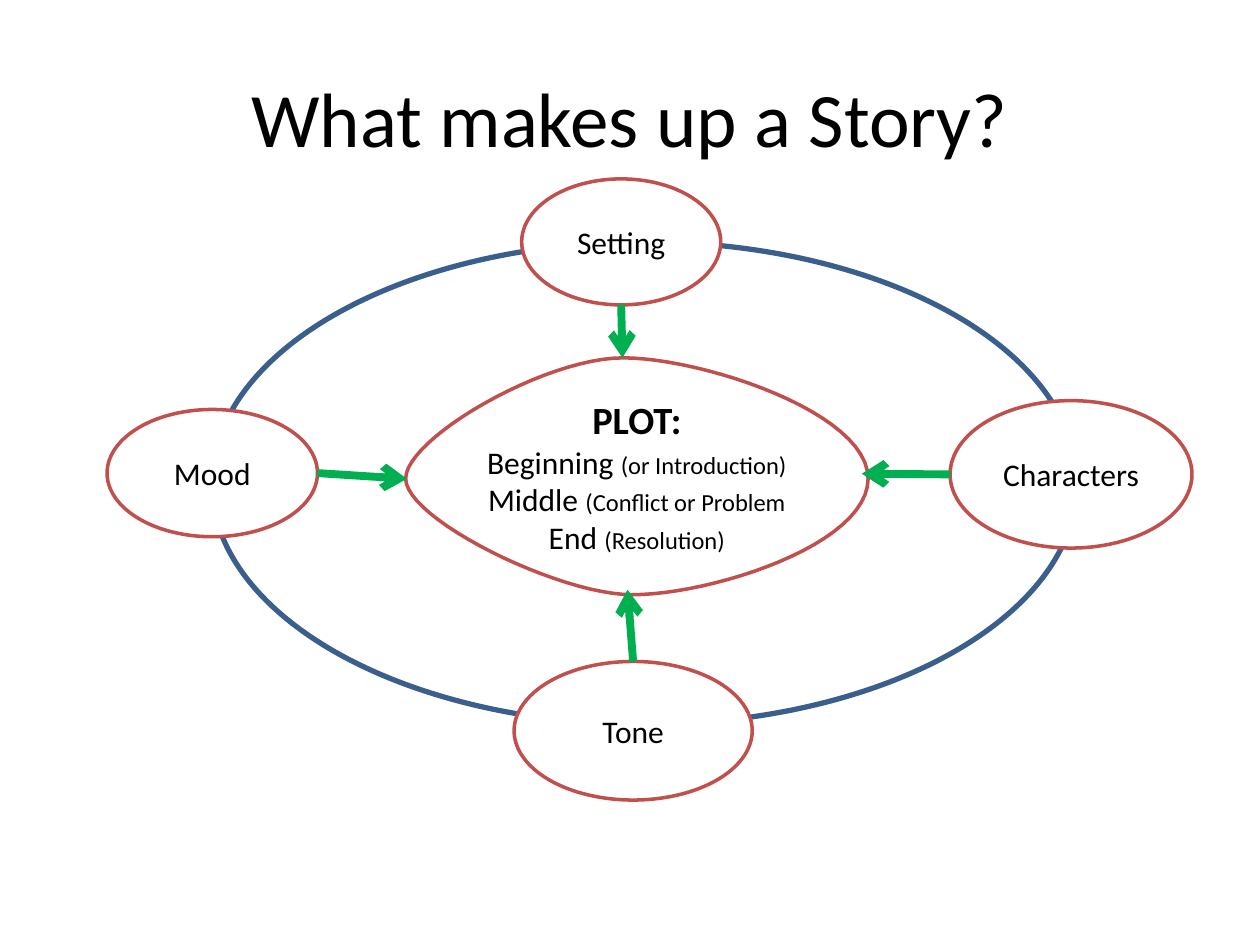
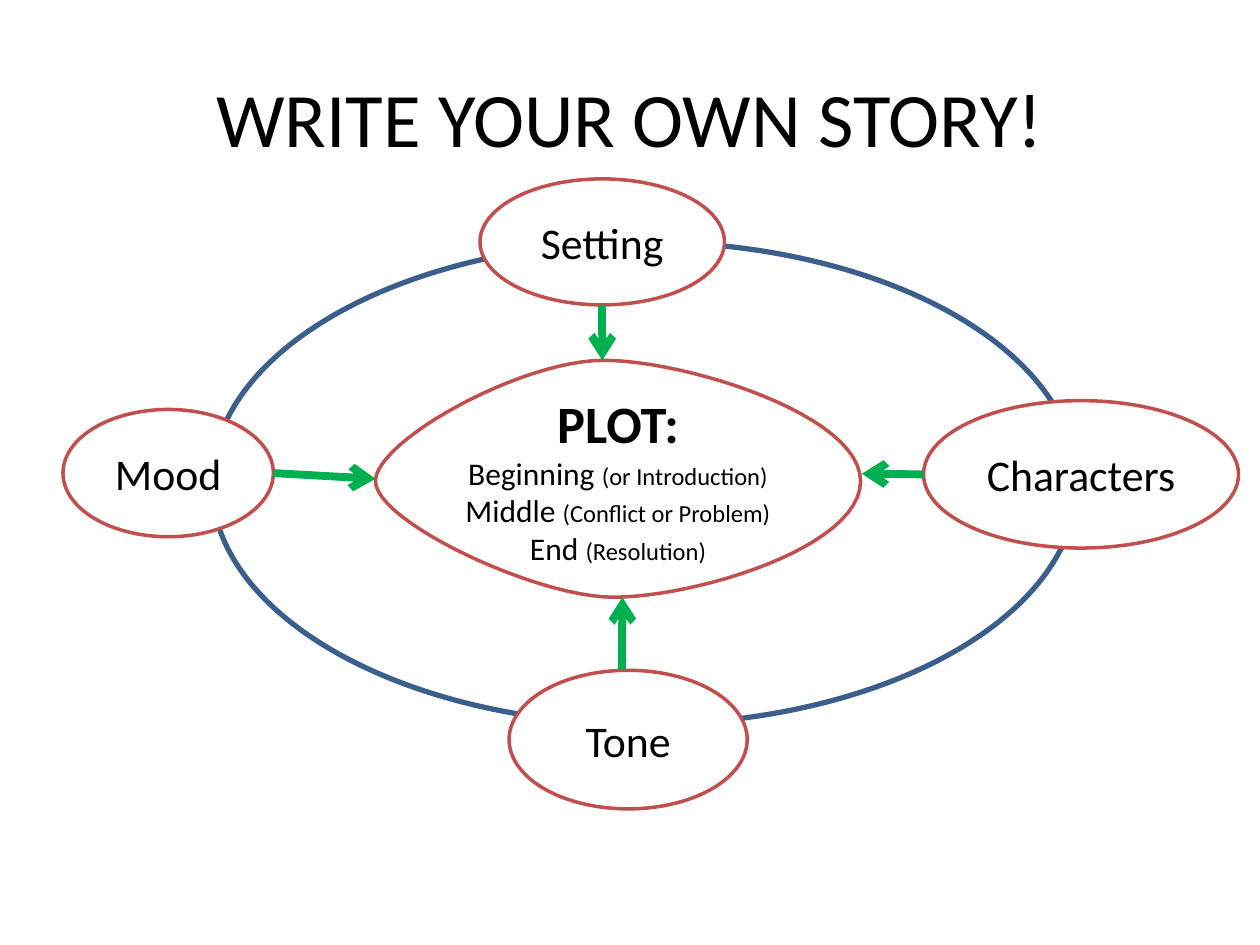
from dataclasses import dataclass
from typing import NamedTuple, Optional

from pptx import Presentation
from pptx.dml.color import RGBColor
from pptx.enum.shapes import MSO_CONNECTOR, MSO_SHAPE
from pptx.enum.text import MSO_ANCHOR, PP_ALIGN
from pptx.oxml.ns import qn
from pptx.util import Inches, Pt
from lxml.etree import SubElement

COLUMNS, ROWS = 100, 75
CELL = Inches(0.1)


@dataclass(frozen=True)
class Theme:
    font: str = "Calibri"
    text: RGBColor = RGBColor(0x00, 0x00, 0x00)
    paper: RGBColor = RGBColor(0xFF, 0xFF, 0xFF)
    ring: RGBColor = RGBColor(0x3A, 0x5F, 0x8C)
    outline: RGBColor = RGBColor(0xC0, 0x50, 0x4D)
    arrow: RGBColor = RGBColor(0x00, 0xB0, 0x50)
    title_size: float = 44
    stage_size: float = 18
    note_size: float = 14
    ring_width: float = 3
    outline_width: float = 2
    arrow_width: float = 4.5


THEME = Theme()


class Point(NamedTuple):
    x: float
    y: float


class Box(NamedTuple):
    """A place on the grid, in columns and rows."""
    x: float
    y: float
    w: float
    h: float

    def at(self, across: float, down: float) -> Point:
        return Point(self.x + across * self.w, self.y + down * self.h)


class Run(NamedTuple):
    text: str
    size: float
    bold: bool = False


class Element(NamedTuple):
    """A story element; its arrow leaves the edge that faces the plot."""
    name: str
    box: Box
    tip: Point
    start: Optional[Point] = None


class Story(NamedTuple):
    title: str
    name_size: float
    heading_size: float
    conflict: str
    plot: Box
    elements: list[Element]


TITLE = Box(5, 3, 90, 12.5)
RING = Box(16.8, 19.2, 68.7, 38.3)
FACING = {"Mood": (1, 0.5), "Tone": (0.5, 0), "Characters": (0, 0.5), "Setting": (0.5, 1)}

# The plot outline in shares of its box: a start, then curves (control, control, end).
PLOT_START = (0, 0.51)
PLOT_CURVES = [
    ((0, 0.34), (0.3, 0), (0.47, 0)),
    ((0.64, 0), (1, 0.23), (1, 0.51)),
    ((1, 0.79), (0.66, 1), (0.49, 1)),
    ((0.33, 1), (0, 0.68), PLOT_START),
]
CURVE_STEPS = 24

STORIES = [
    Story("What makes up a Story?", 18, 22, "(Conflict or Problem", Box(32.2, 28.4, 36.7, 18.8), [
        Element("Mood", Box(8.5, 32.5, 16.7, 10.1), Point(32.3, 38)),
        Element("Tone", Box(40.8, 52.5, 18.9, 11), Point(49.8, 46.8)),
        Element("Characters", Box(75.4, 31.8, 19.2, 11.7), Point(68.4, 37.6)),
        Element("Setting", Box(41.4, 14.2, 15.8, 10), Point(49.4, 28.4)),
    ]),
    Story("WRITE YOUR OWN STORY!", 25, 30, "(Conflict or Problem)", Box(29.8, 28.6, 38.5, 18.8), [
        Element("Mood", Box(5, 32.5, 16.7, 10.1), Point(29.8, 38)),
        Element("Tone", Box(40.4, 53.2, 18.9, 11), Point(49.4, 47.4), Point(49.4, 53.1)),
        Element("Characters", Box(73.3, 31.8, 25, 11.7), Point(68.4, 37.6)),
        Element("Setting", Box(38.1, 14.2, 19.4, 10), Point(47.8, 28.6)),
    ]),
]


def emu(*cells: float) -> list[int]:
    return [round(c * CELL) for c in cells]


def write(tf, lines: list[list[Run]]) -> None:
    tf.word_wrap = True
    tf.vertical_anchor = MSO_ANCHOR.MIDDLE
    for i, runs in enumerate(lines):
        p = tf.add_paragraph() if i else tf.paragraphs[0]
        p.alignment = PP_ALIGN.CENTER
        for run in runs:
            r = p.add_run()
            r.text = run.text
            r.font.name = THEME.font
            r.font.size = Pt(run.size)
            r.font.bold = run.bold
            r.font.color.rgb = THEME.text


def set_line(sp, color: RGBColor, width: float) -> None:
    sp.line.color.rgb = color
    sp.line.width = Pt(width)


def style_bubble(sp) -> None:
    sp.shadow.inherit = False
    sp.fill.solid()
    sp.fill.fore_color.rgb = THEME.paper
    set_line(sp, THEME.outline, THEME.outline_width)


def add_title(s, text: str) -> None:
    title = s.shapes.title
    title.left, title.top, title.width, title.height = emu(*TITLE)
    write(title.text_frame, [[Run(text, THEME.title_size)]])


def add_ring(s) -> None:
    sp = s.shapes.add_shape(MSO_SHAPE.OVAL, *emu(*RING))
    sp.shadow.inherit = False
    sp.fill.background()
    set_line(sp, THEME.ring, THEME.ring_width)


def add_element(s, element: Element, size: float) -> None:
    sp = s.shapes.add_shape(MSO_SHAPE.OVAL, *emu(*element.box))
    style_bubble(sp)
    write(sp.text_frame, [[Run(element.name, size)]])


def plot_outline() -> list[tuple[float, float]]:
    """Points along the plot's Bézier curves, in shares of its box."""
    points, a = [], PLOT_START
    for b, c, d in PLOT_CURVES:
        for step in range(1, CURVE_STEPS + 1):
            t = step / CURVE_STEPS
            u = 1 - t
            weights = (u**3, 3 * u * u * t, 3 * u * t * t, t**3)
            points.append(tuple(
                sum(w * k for w, k in zip(weights, axis)) for axis in zip(a, b, c, d)))
        a = d
    return points


def add_plot(s, story: Story) -> None:
    builder = s.shapes.build_freeform(*emu(*story.plot.at(*PLOT_START)))
    builder.add_line_segments([emu(*story.plot.at(*pt)) for pt in plot_outline()], close=True)
    sp = builder.convert_to_shape()
    style_bubble(sp)
    stages = [("Beginning ", "(or Introduction)"), ("Middle ", story.conflict), ("End ", "(Resolution)")]
    write(sp.text_frame, [[Run("PLOT:", story.heading_size, True)]] + [
        [Run(stage, THEME.stage_size), Run(note, THEME.note_size)] for stage, note in stages])


def add_arrow(s, element: Element) -> None:
    start = element.start or element.box.at(*FACING[element.name])
    line = s.shapes.add_connector(MSO_CONNECTOR.STRAIGHT, *emu(*start, *element.tip))
    set_line(line, THEME.arrow, THEME.arrow_width)
    SubElement(line.line._get_or_add_ln(), qn("a:tailEnd"), type="arrow")
    SubElement(line._element.spPr, qn("a:effectLst"))


def add_story(prs, story: Story) -> None:
    s = prs.slides.add_slide(prs.slide_layouts.get_by_name("Title Only"))
    add_title(s, story.title)
    add_ring(s)
    for element in story.elements:
        add_element(s, element, story.name_size)
    add_plot(s, story)
    for element in story.elements:
        add_arrow(s, element)


def main() -> None:
    prs = Presentation()
    prs.slide_width, prs.slide_height = emu(COLUMNS, ROWS)
    for story in STORIES:
        add_story(prs, story)
    prs.save("out.pptx")


if __name__ == "__main__":
    main()
